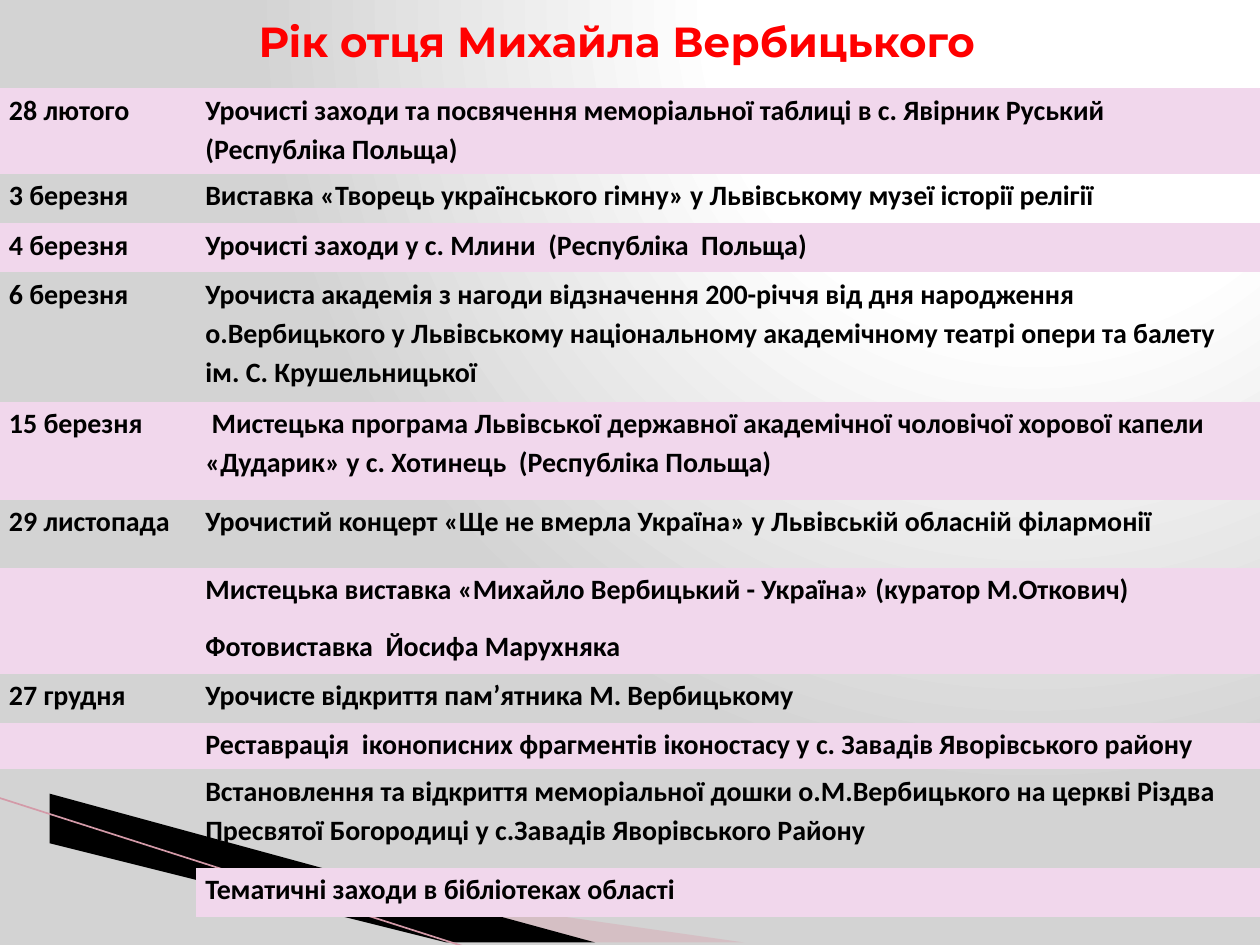
from lxml.etree import SubElement
from pptx import Presentation
from pptx.dml.color import RGBColor
from pptx.enum.shapes import MSO_CONNECTOR
from pptx.enum.text import MSO_ANCHOR, MSO_AUTO_SIZE, PP_ALIGN
from pptx.oxml import parse_xml
from pptx.oxml.ns import qn
from pptx.util import Cm, Pt

RED = RGBColor(0xFF, 0x00, 0x00)
BLACK = RGBColor(0x00, 0x00, 0x00)
PINK = RGBColor(0xF1, 0xD7, 0xEC)
ROSE = RGBColor(0xD8, 0xA3, 0xAF)
ROSE_LINE = RGBColor(0xD3, 0x9A, 0xA8)
NO_GRID_STYLE = "{2D5ABB26-0587-4C30-8999-92F81FD0307C}"

TITLE = "Рік отця Михайла Вербицького"
# date, event, row height in cm
EVENTS = [
    ("28 лютого", "Урочисті заходи та посвячення меморіальної таблиці в с. Явірник Руський "
     "(Республіка Польща)", 1.73),
    ("3 березня", "Виставка «Творець українського гімну» у Львівському музеї історії релігії", 0.99),
    ("4 березня", "Урочисті заходи у с. Млини  (Республіка  Польща)", 0.99),
    ("6 березня", "Урочиста академія з нагоди відзначення 200-річчя від дня народження "
     "о.Вербицького у Львівському національному академічному театрі опери та балету "
     "ім. С. Крушельницької", 2.61),
    ("15 березня", " Мистецька програма Львівської державної академічної чоловічої хорової капели "
     "«Дударик» у с. Хотинець  (Республіка Польща)", 1.98),
    ("29 листопада", "Урочистий концерт «Ще не вмерла Україна» у Львівській обласній філармонії", 1.37),
    ("", "Мистецька виставка «Михайло Вербицький - Україна» (куратор М.Откович)\n"
     "Фотовиставка  Йосифа Марухняка", 2.13),
    ("27 грудня", "Урочисте відкриття пам’ятника М. Вербицькому", 0.99),
    ("", "Реставрація  іконописних фрагментів іконостасу у с. Завадів Яворівського району", 0.94),
    ("", "Встановлення та відкриття меморіальної дошки о.М.Вербицького на церкві Різдва "
     "Пресвятої Богородиці у с.Завадів Яворівського Району", 1.98),
    ("", "Тематичні заходи в бібліотеках області", 0.99),
]
COLUMN_WIDTHS = (3.96, 21.44)
# colour, opacity in percent, corners in cm
WEDGES = [
    (ROSE, 40, [(1.4, 16.54), (15.11, 19.08), (11.58, 19.08), (1.4, 16.51)]),
    (BLACK, 100, [(1.35, 16.48), (11.61, 19.08), (9.45, 19.1), (1.37, 16.51)]),
]
BACKGROUND = """
<a:gradFill xmlns:a="http://schemas.openxmlformats.org/drawingml/2006/main" rotWithShape="1">
  <a:gsLst>
    <a:gs pos="0"><a:srgbClr val="FFFFFF"/></a:gs>
    <a:gs pos="40000"><a:srgbClr val="FFFFFF"/></a:gs>
    <a:gs pos="100000"><a:srgbClr val="D3D3D3"/></a:gs>
  </a:gsLst>
  <a:path path="circle"><a:fillToRect l="65000" t="0" r="0" b="98000"/></a:path>
</a:gradFill>"""


def set_background(slide):
    slide.background.fill.solid()
    solid = next(slide.element.iter(qn("a:solidFill")))
    solid.getparent().replace(solid, parse_xml(BACKGROUND))


def add_wedge(slide, color, opacity, corners):
    builder = slide.shapes.build_freeform(*corners[0], scale=Cm(1))
    builder.add_line_segments(corners[1:], close=True)
    sp = builder.convert_to_shape()
    sp.shadow.inherit = False
    sp.fill.solid()
    sp.fill.fore_color.rgb = color
    sp.line.fill.background()
    if opacity < 100:
        rgb = next(sp.element.spPr.iter(qn("a:srgbClr")))
        SubElement(rgb, qn("a:alpha")).set("val", str(opacity * 1000))


def add_edge_line(slide):
    line = slide.shapes.add_connector(
        MSO_CONNECTOR.STRAIGHT, Cm(-0.03), Cm(16.08), Cm(9.42), Cm(19.1))
    line.line.color.rgb = ROSE_LINE
    line.line.width = Pt(0.95)
    SubElement(line.element.spPr, qn("a:effectLst"))


def format_title(title):
    title.left, title.top, title.width, title.height = Cm(1), 0, Cm(22.86), Cm(1.63)
    tf = title.text_frame
    tf.text = TITLE
    tf.auto_size = MSO_AUTO_SIZE.NONE
    tf.vertical_anchor = MSO_ANCHOR.MIDDLE
    p = tf.paragraphs[0]
    p.alignment = PP_ALIGN.CENTER
    font = p.runs[0].font
    font.name, font.size, font.bold = "Montserrat", Pt(24), True
    font.color.rgb = RED


def fill_cell(cell, text, shaded):
    cell.margin_left = cell.margin_right = Cm(0.18)
    cell.margin_top = cell.margin_bottom = 0
    if shaded:
        cell.fill.solid()
        cell.fill.fore_color.rgb = PINK
    else:
        cell.fill.background()
    cell.text_frame.text = text
    for p in cell.text_frame.paragraphs:
        p.line_spacing = 1.15
        p.space_after = Pt(10)
        for r in p.runs:
            r.font.name, r.font.size, r.font.bold = "Calibri", Pt(16), True
            r.font.color.rgb = BLACK


def add_events_table(slide):
    height = sum(event[2] for event in EVENTS)
    frame = slide.shapes.add_table(
        len(EVENTS), 2, 0, Cm(1.78), Cm(sum(COLUMN_WIDTHS)), Cm(height))
    table = frame.table
    table.first_row = table.horz_banding = False
    next(frame.element.iter(qn("a:tableStyleId"))).text = NO_GRID_STYLE
    for column, width in zip(table.columns, COLUMN_WIDTHS):
        column.width = Cm(width)
    last = len(EVENTS) - 1
    for i, (date, event, row_height) in enumerate(EVENTS):
        table.rows[i].height = Cm(row_height)
        shaded = i % 2 == 0
        fill_cell(table.cell(i, 0), date, shaded and i != last)
        fill_cell(table.cell(i, 1), event, shaded)


def main():
    prs = Presentation()
    prs.slide_width, prs.slide_height = Cm(25.4), Cm(19.05)
    slide = prs.slides.add_slide(prs.slide_layouts[5])
    set_background(slide)
    for wedge in WEDGES:
        add_wedge(slide, *wedge)
    add_edge_line(slide)
    format_title(slide.shapes.title)
    add_events_table(slide)
    prs.save("out.pptx")


if __name__ == "__main__":
    main()
